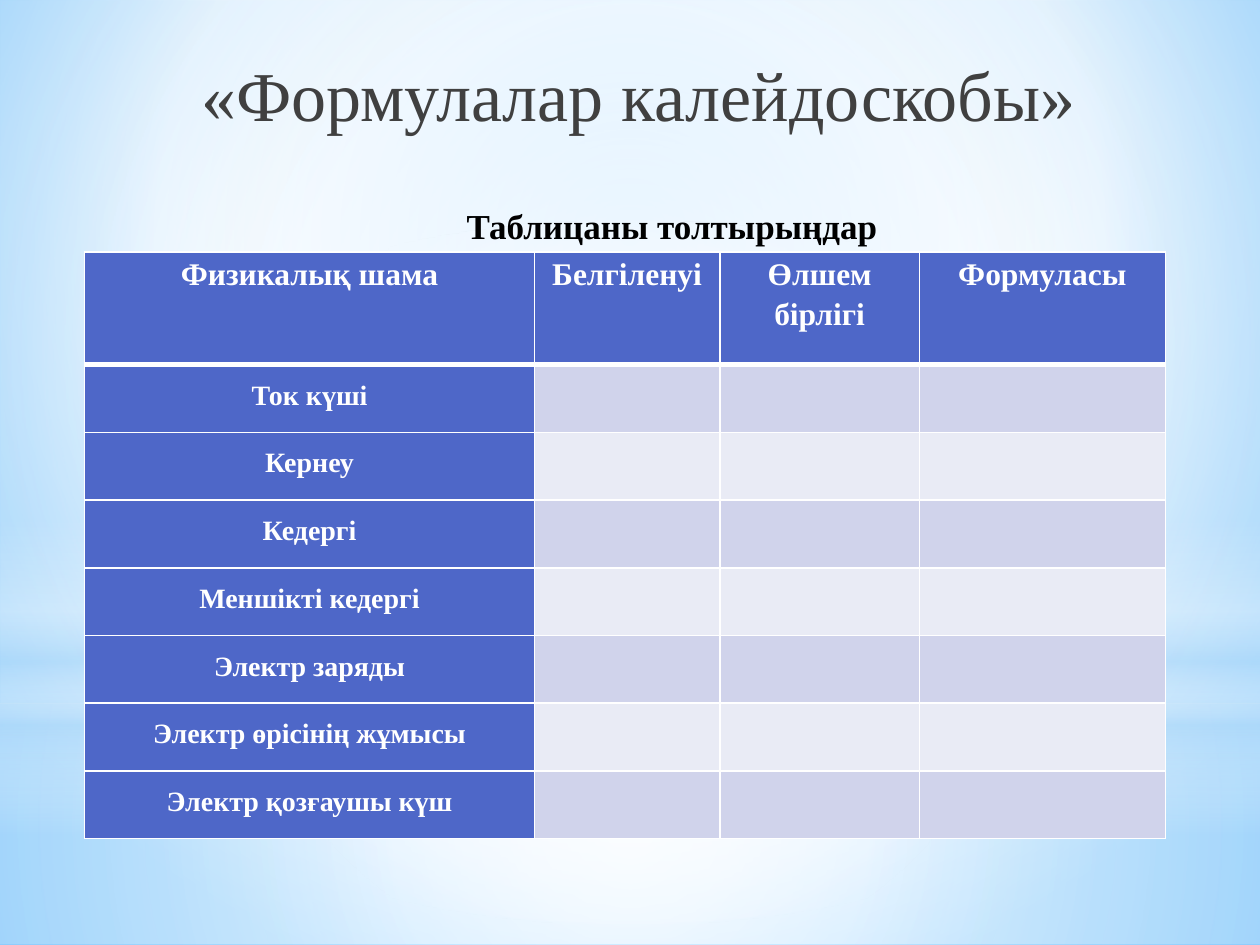
from lxml import etree
from pptx import Presentation
from pptx.dml.color import RGBColor
from pptx.enum import shapes, text
from pptx.oxml import ns
from pptx.util import Pt

WHITE, BLUE, SKY = "FFFFFF", "4E67C8", "B4DCFA"
BANDS = ("D0D3EB", "E9EBF5")


def color(value):
    return RGBColor.from_string(value)


def add_xml(parent, tag, **attributes):
    return etree.SubElement(parent, ns.qn(tag), {k: str(v) for k, v in attributes.items()})


class Deck:
    font = "Times New Roman"

    def __init__(self, width, height):
        self.prs = Presentation()
        self.prs.slide_width, self.prs.slide_height = Pt(width), Pt(height)
        self.slide = self.prs.slides.add_slide(self.prs.slide_layouts[6])

    def gradient(self, holder, stops, focus=None):
        """Swap a solid fill for stops of (position, colour, opacity) in percent."""
        grad = etree.Element(ns.qn("a:gradFill"), rotWithShape="1")
        stop_list = add_xml(grad, "a:gsLst")
        for position, value, opacity in stops:
            stop = add_xml(stop_list, "a:gs", pos=position * 1000)
            tint = add_xml(stop, "a:srgbClr", val=value)
            if opacity < 100:
                add_xml(tint, "a:alpha", val=opacity * 1000)
        if focus:
            route = add_xml(grad, "a:path", path="circle")
            add_xml(route, "a:fillToRect", **{side: v * 1000 for side, v in zip("ltrb", focus)})
        else:
            add_xml(grad, "a:lin", ang=90 * 60000, scaled=0)
        holder.replace(holder.find(ns.qn("a:solidFill")), grad)

    def background(self, stops, focus):
        self.slide.background.fill.solid()
        self.gradient(self.slide.element.find(".//" + ns.qn("p:bgPr")), stops, focus)

    def glow(self, kind, top, height, stops, focus=None):
        shape = self.slide.shapes.add_shape(kind, 0, Pt(top), self.prs.slide_width, Pt(height))
        shape.shadow.inherit = False
        shape.line.fill.background()
        shape.fill.solid()
        self.gradient(shape.element.spPr, stops, focus)

    def style_text(self, paragraph, words, size, value, bold=False):
        paragraph.text = words
        paragraph.alignment = text.PP_ALIGN.CENTER
        font = paragraph.font
        font.name, font.size, font.bold = self.font, Pt(size), bold
        font.color.rgb = color(value)

    def label(self, box, words, size, value, bold=False, anchor=text.MSO_ANCHOR.TOP):
        frame = self.slide.shapes.add_textbox(*map(Pt, box)).text_frame
        frame.word_wrap, frame.vertical_anchor = True, anchor
        self.style_text(frame.paragraphs[0], words, size, value, bold)
        return frame.paragraphs[0]

    def border(self, cell, side, width):
        line = add_xml(cell._tc.get_or_add_tcPr(), "a:ln" + side, w=Pt(width))
        add_xml(add_xml(line, "a:solidFill"), "a:srgbClr", val=WHITE)

    def table(self, left, top, widths, heights, headings, quantities):
        table = self.slide.shapes.add_table(
            len(heights), len(widths), Pt(left), Pt(top), Pt(sum(widths)), Pt(sum(heights))).table
        table.first_row = table.horz_banding = False
        for column, width in zip(table.columns, widths):
            column.width = Pt(width)
        for row, height in zip(table.rows, heights):
            row.height = Pt(height)
        for r in range(len(heights)):
            for c in range(len(widths)):
                cell = table.cell(r, c)
                cell.margin_left = cell.margin_right = Pt(5)
                cell.margin_top = cell.margin_bottom = 0
                for side in "LRTB":
                    header_edge = (r, side) in ((0, "B"), (1, "T"))
                    self.border(cell, side, 3 if header_edge else 1)
                cell.fill.solid()
                is_heading = r == 0 or c == 0
                cell.fill.fore_color.rgb = color(BLUE if is_heading else BANDS[(r - 1) % 2])
                if is_heading:
                    words = headings[c] if r == 0 else quantities[r - 1]
                    paragraph = cell.text_frame.paragraphs[0]
                    self.style_text(paragraph, words, 16 if r else 18, WHITE, True)
                    paragraph.line_spacing = 1.5 if r else 1.15


def main():
    deck = Deck(720, 540)
    center = (50, 50, 50, 50)
    rectangle, oval = shapes.MSO_SHAPE.RECTANGLE, shapes.MSO_SHAPE.OVAL

    # Sky backdrop
    deck.background([(0, "9ED5FF", 100), (60, WHITE, 100), (100, "5BB9FF", 100)],
                    (20, 10, 20, 60))
    deck.glow(rectangle, 402, 138, [(0, WHITE, 91), (37, WHITE, 76), (100, SKY, 79)], center)
    deck.glow(rectangle, 0, 402, [(0, WHITE, 89), (48, WHITE, 62), (100, SKY, 79)], center)
    deck.glow(rectangle, 297, 180, [(0, WHITE, 0), (29, WHITE, 30), (45, SKY, 40),
                                    (55, WHITE, 26), (65, SKY, 60), (100, WHITE, 0)])
    deck.glow(oval, 126, 402, [(0, WHITE, 100), (56, WHITE, 0)], center)

    # Title
    title = deck.label((54, 26, 618, 63), "«Формулалар калейдоскобы»", 40, "404040")
    title.space_before, title.space_after = Pt(8), Pt(3)
    title._p.get_or_add_pPr().set("marL", str(Pt(3.6)))

    # Table of quantities to fill in
    quantities = ["Ток күші", "Кернеу", "Кедергі", "Меншікті кедергі", "Электр заряды",
                  "Электр өрісінің жұмысы", "Электр қозғаушы күш"]
    deck.table(48.4, 144, [257, 106, 114, 140.6], [64.4] + [38.7] * len(quantities),
               ["Физикалық шама", "Белгіленуі", "Өлшем бірлігі", "Формуласы"], quantities)

    # Task
    deck.label((119.5, 113, 529, 32), "Таблицаны толтырыңдар", 20, "000000", True,
               text.MSO_ANCHOR.MIDDLE)

    deck.prs.save("out.pptx")


if __name__ == "__main__":
    main()
